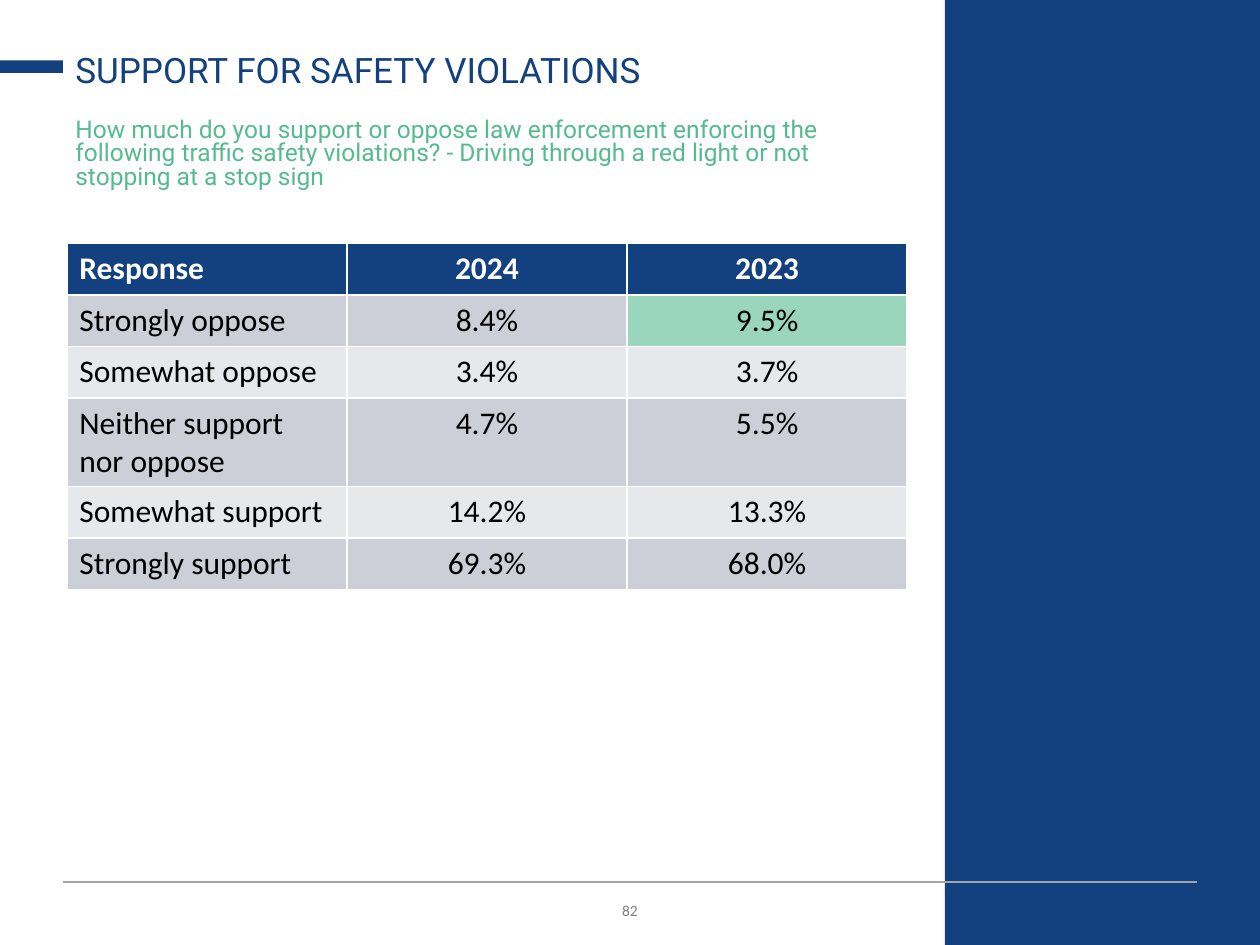
from dataclasses import dataclass

from pptx import Presentation
from pptx.dml.color import RGBColor
from pptx.enum.shapes import MSO_CONNECTOR, MSO_SHAPE
from pptx.enum.text import MSO_ANCHOR, PP_ALIGN
from pptx.oxml.ns import qn
from pptx.util import Inches, Pt

LEFT, CENTER = PP_ALIGN.LEFT, PP_ALIGN.CENTER
TOP, MIDDLE, BOTTOM = MSO_ANCHOR.TOP, MSO_ANCHOR.MIDDLE, MSO_ANCHOR.BOTTOM
RECTANGLE, STRAIGHT = MSO_SHAPE.RECTANGLE, MSO_CONNECTOR.STRAIGHT
BLANK_LAYOUT = 6


@dataclass(frozen=True)
class Theme:
    navy: str = "13407E"
    green: str = "55BA8F"
    highlight: str = "99D6BC"
    bands: tuple = ("CCCFD8", "E7E8EC")
    white: str = "FFFFFF"
    black: str = "000000"
    rule: str = "A6A6A6"
    page_number: str = "808080"
    heading_font: str = "Roboto"
    body_font: str = "Calibri"
    title_size: int = 20
    table_size: int = 18
    question_size: int = 14
    number_size: int = 11


class SlideBuilder:
    def __init__(self, slide, theme):
        self.shapes = slide.shapes
        self.theme = theme

    def add_span(self, para, words, style, **layout):
        """Put one run in a paragraph, with font and paragraph formats."""
        for name, value in layout.items():
            setattr(para, name, value)
        span = para.add_run()
        span.text = words
        formats = {"name": style["font"], "size": Pt(style["size"]),
                   "bold": style.get("bold", False)}
        for name, value in formats.items():
            setattr(span.font, name, value)
        span.font.color.rgb = RGBColor.from_string(style["color"])
        return span

    def text(self, place, words, style, anchor=TOP, **layout):
        box = self.shapes.add_textbox(*map(Inches, place))
        frame = box.text_frame
        frame.word_wrap = True
        frame.vertical_anchor = anchor
        return self.add_span(frame.paragraphs[0], words, style, **layout)

    def block(self, place, color):
        block = self.shapes.add_shape(RECTANGLE, *map(Inches, place))
        block.shadow.inherit = False
        block.fill.solid()
        block.fill.fore_color.rgb = RGBColor.from_string(color)
        block.line.fill.background()

    def line(self, ends, color, width):
        line = self.shapes.add_connector(STRAIGHT, *map(Inches, ends))
        line.line.color.rgb = RGBColor.from_string(color)
        line.line.width = Pt(width)
        properties = line._element.spPr
        properties.append(properties.makeelement(qn("a:effectLst"), {}))

    def table(self, place, rows, highlights):
        """White cell borders come from the default table style."""
        theme = self.theme
        frame = self.shapes.add_table(len(rows), len(rows[0]),
                                      *map(Inches, place))
        for r, row in enumerate(rows):
            header = r == 0
            band = theme.navy if header else theme.bands[(r - 1) % 2]
            style = {"font": theme.body_font, "size": theme.table_size,
                     "color": theme.white if header else theme.black,
                     "bold": header}
            for c, words in enumerate(row):
                cell = frame.table.cell(r, c)
                color = theme.highlight if (r, c) in highlights else band
                cell.fill.solid()
                cell.fill.fore_color.rgb = RGBColor.from_string(color)
                self.add_span(cell.text_frame.paragraphs[0], words, style,
                              alignment=CENTER if c else LEFT)


def main():
    theme = Theme()
    deck = Presentation()
    deck.slide_width, deck.slide_height = Inches(10), Inches(7.5)
    slide = deck.slides.add_slide(deck.slide_layouts[BLANK_LAYOUT])
    page = SlideBuilder(slide, theme)

    # Page number, in small capitals
    number = page.text(
        (0.5, 7.06, 9, 0.3), "82",
        {"font": theme.body_font, "size": theme.number_size,
         "color": theme.page_number}, MIDDLE, alignment=CENTER)
    number._r.get_or_add_rPr().set("cap", "small")

    # Side panel, footer rule and title accent
    page.block((7.5, 0, 2.5, 7.5), theme.navy)
    page.line((0.5, 7, 9.5, 7), theme.rule, 0.75)
    page.block((0, 0.48, 0.5, 0.1), theme.navy)

    # Survey question and title
    page.text(
        (0.5, 0.9, 6.7, 0.67),
        "How much do you support or oppose law enforcement enforcing the "
        "following traffic safety violations? - Driving through a red light "
        "or not stopping at a stop sign",
        {"font": theme.heading_font, "size": theme.question_size,
         "color": theme.green}, line_spacing=0.8)
    page.text(
        (0.5, 0.29, 6.7, 0.48), "SUPPORT FOR SAFETY VIOLATIONS",
        {"font": theme.heading_font, "size": theme.title_size,
         "color": theme.navy}, BOTTOM, line_spacing=0.9)

    # Responses by year
    responses = [
        ("Response", "2024", "2023"),
        ("Strongly oppose", "8.4%", "9.5%"),
        ("Somewhat oppose", "3.4%", "3.7%"),
        ("Neither support nor oppose", "4.7%", "5.5%"),
        ("Somewhat support", "14.2%", "13.3%"),
        ("Strongly support", "69.3%", "68.0%"),
    ]
    row_height = 0.41
    page.table((0.53, 1.93, 6.67, row_height * len(responses)), responses,
               highlights={(1, 2)})

    deck.save("out.pptx")


if __name__ == "__main__":
    main()
